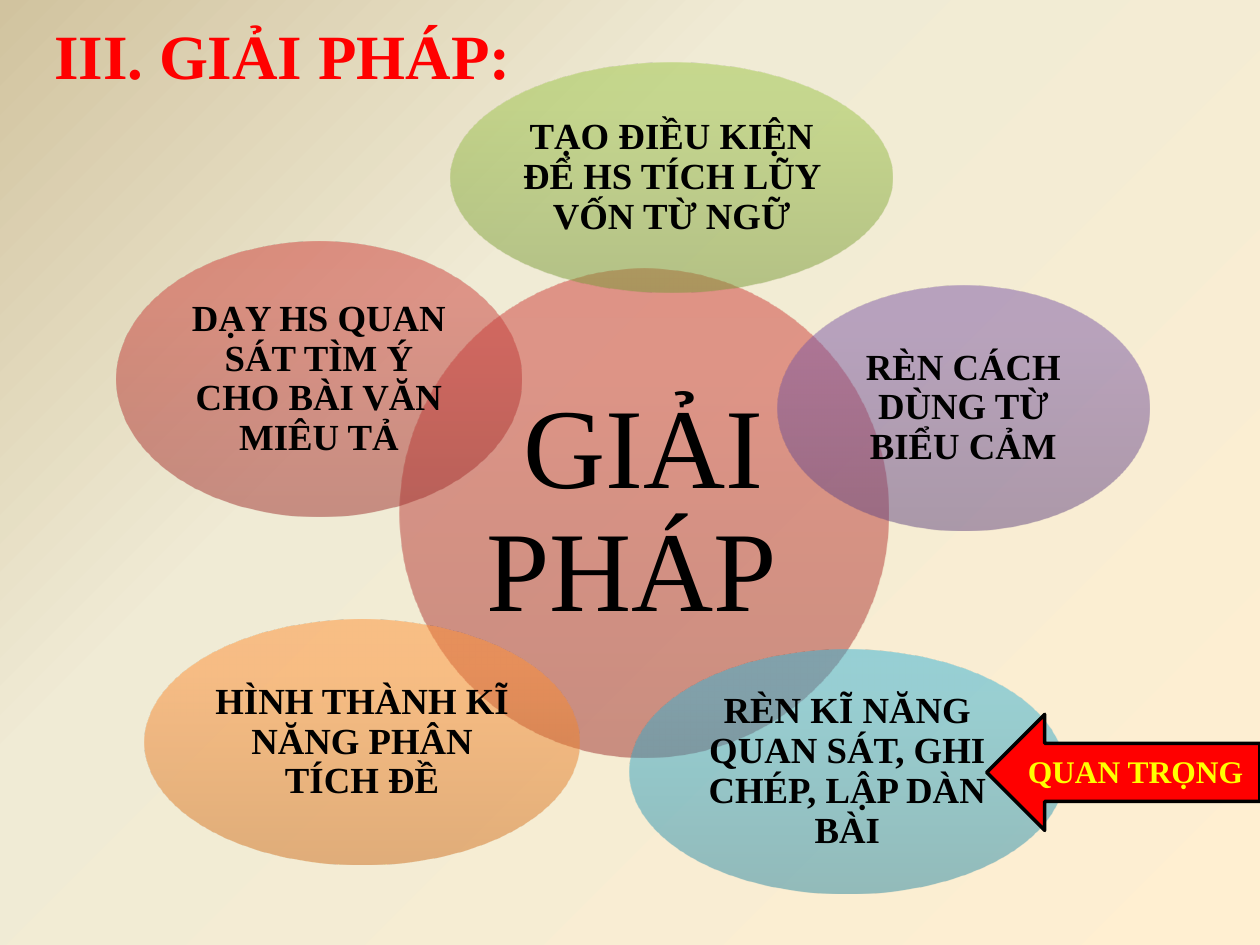
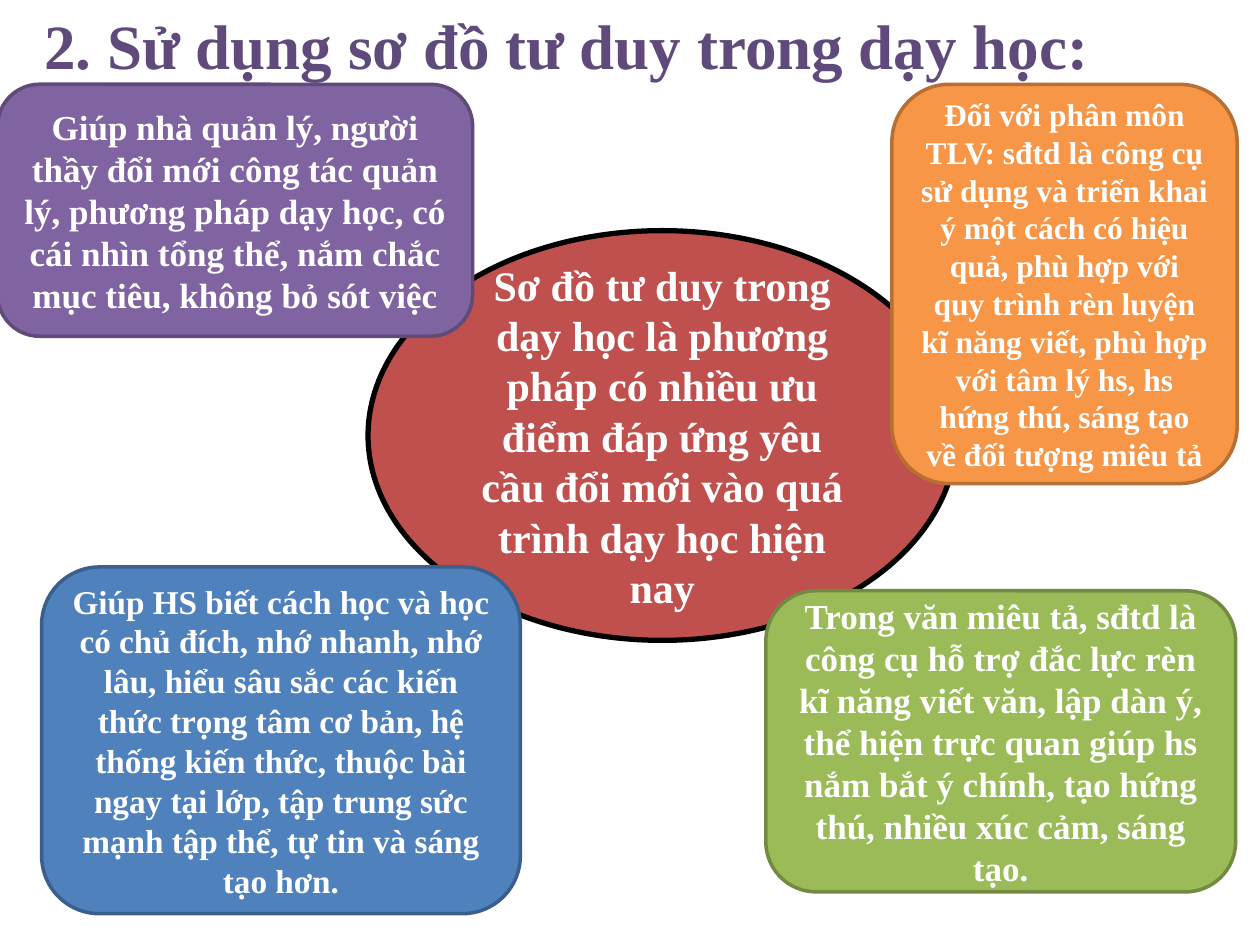
from lxml.etree import SubElement
from pptx import Presentation
from pptx.dml.color import RGBColor
from pptx.enum.shapes import MSO_SHAPE
from pptx.enum.text import MSO_ANCHOR, PP_ALIGN
from pptx.oxml.ns import qn
from pptx.util import Cm, Pt

FONT = "Times New Roman"
BLACK = RGBColor(0x00, 0x00, 0x00)
WHITE = RGBColor(0xFF, 0xFF, 0xFF)
RED = RGBColor(0xFF, 0x00, 0x00)
YELLOW = RGBColor(0xFF, 0xFF, 0x00)
DARK_PURPLE = RGBColor(0x60, 0x4A, 0x7B)
BRICK = RGBColor(0xC0, 0x50, 0x4D)
PURPLE, PURPLE_EDGE = RGBColor(0x80, 0x64, 0xA2), RGBColor(0x5F, 0x4A, 0x78)
BLUE, BLUE_EDGE = RGBColor(0x4F, 0x81, 0xBD), RGBColor(0x3A, 0x5F, 0x8C)
ORANGE, ORANGE_EDGE = RGBColor(0xF7, 0x96, 0x46), RGBColor(0xB7, 0x6F, 0x34)
GREEN, GREEN_EDGE = RGBColor(0x9B, 0xBB, 0x59), RGBColor(0x73, 0x8A, 0x42)

SAND_FADE = (RGBColor(0xFF, 0xEF, 0xD1), RGBColor(0xF0, 0xEB, 0xD5), RGBColor(0xD1, 0xC3, 0x9F))
RED_FADE = (RGBColor(0x9C, 0x2F, 0x2D), RGBColor(0xCB, 0x3E, 0x3A), RGBColor(0xCE, 0x3B, 0x37))
GREEN_FADE = (RGBColor(0x77, 0x97, 0x37), RGBColor(0x9B, 0xC3, 0x48), RGBColor(0x9D, 0xC7, 0x46))
PURPLE_FADE = (RGBColor(0x5F, 0x44, 0x80), RGBColor(0x7B, 0x58, 0xA6), RGBColor(0x7C, 0x57, 0xA8))
TEAL_FADE = (RGBColor(0x2A, 0x88, 0xA2), RGBColor(0x37, 0xB1, 0xD2), RGBColor(0x34, 0xB4, 0xD6))
ORANGE_FADE = (RGBColor(0xCC, 0x6E, 0x20), RGBColor(0xFF, 0x90, 0x34), RGBColor(0xFF, 0x91, 0x36))


def set_all(target, values):
    for name, value in values.items():
        setattr(target, name, value)


class Deck:
    def __init__(self):
        self.presentation = Presentation()
        set_all(self.presentation, {"slide_width": Cm(25.4), "slide_height": Cm(19.05)})
        self.slide = None

    def new_slide(self):
        self.slide = self.presentation.slides.add_slide(self.presentation.slide_layouts[6])

    def fade(self, fill, element, colors, middle, angle, opacity=100):
        fill.gradient()
        fill.gradient_angle = angle
        stops = element.find(".//" + qn("a:gsLst"))
        for stop in list(stops):
            stops.remove(stop)
        for position, color in zip((0, middle, 100), colors):
            stop = SubElement(stops, qn("a:gs"), pos=str(position * 1000))
            tint = SubElement(stop, qn("a:srgbClr"), val=str(color))
            if opacity < 100:
                SubElement(tint, qn("a:alpha"), val=str(opacity * 1000))

    def background(self, colors):
        self.fade(self.slide.background.fill, self.slide.element, colors, 65, 135)

    def fill_text(self, frame, text, size, color, bold=True, align=PP_ALIGN.LEFT, spacing=1.0, **layout):
        set_all(frame, {"word_wrap": True, **layout})
        paragraph = frame.paragraphs[0]
        set_all(paragraph, {"alignment": align, "line_spacing": spacing})
        run = paragraph.add_run()
        run.text = text
        set_all(run.font, {"name": FONT, "size": Pt(size), "bold": bold})
        run.font.color.rgb = color

    def text(self, box, text, size, color, **style):
        label = self.slide.shapes.add_textbox(*map(Cm, box))
        self.fill_text(label.text_frame, text, size, color, **style)

    def title(self, left, top, text, color):
        self.text((left, top, 26.24, 2), text, 36, color)

    def shape(self, kind, box):
        shape = self.slide.shapes.add_shape(kind, *map(Cm, box))
        shape.shadow.inherit = False
        return shape

    def solid(self, kind, box, fill, edge, width=2):
        shape = self.shape(kind, box)
        shape.fill.solid()
        shape.fill.fore_color.rgb = fill
        shape.line.color.rgb = edge
        shape.line.width = Pt(width)
        return shape

    def panel(self, kind, box, fill, edge, text, size, width=2):
        panel = self.solid(kind, box, fill, edge, width)
        self.fill_text(panel.text_frame, text, size, WHITE, align=PP_ALIGN.CENTER,
                       vertical_anchor=MSO_ANCHOR.MIDDLE)

    def bubble(self, box, colors, text, size=21, bold=True, inset=0.08):
        bubble = self.shape(MSO_SHAPE.OVAL, box)
        self.fade(bubble.fill, bubble.element, colors, 80, 90, opacity=50)
        bubble.line.fill.background()
        margins = {f"margin_{side}": Cm(inset) for side in ("left", "top", "right", "bottom")}
        self.fill_text(bubble.text_frame, text, size, BLACK, bold, PP_ALIGN.CENTER, 0.9,
                       vertical_anchor=MSO_ANCHOR.MIDDLE, **margins)

    def arrow(self, box, text):
        left, top, width, height = box
        self.solid(MSO_SHAPE.RIGHT_ARROW, box, RED, BLACK).rotation = 180
        self.text((left, top + 0.64, width + 0.84, 1.02), text, 18, YELLOW, margin_left=Cm(0.83))


def build_solutions(deck):
    deck.new_slide()
    deck.background(SAND_FADE)
    deck.title(0.84, 0.2, "III. GIẢI PHÁP:", RED)
    deck.bubble((8.05, 5.41, 9.86, 9.86), RED_FADE, "GIẢI PHÁP ", 65, False, 0.23)
    solutions = [
        ((9.09, 1.27, 8.9, 4.62), GREEN_FADE, "TẠO ĐIỀU KIỆN ĐỂ HS TÍCH LŨY VỐN TỪ NGỮ"),
        ((15.67, 5.76, 7.5, 4.93), PURPLE_FADE, "RÈN CÁCH DÙNG TỪ BIỂU CẢM"),
        ((12.7, 13.09, 8.76, 4.93), TEAL_FADE, "RÈN KĨ NĂNG QUAN SÁT, GHI CHÉP, LẬP DÀN BÀI"),
        ((2.92, 12.5, 8.76, 4.93), ORANGE_FADE, "HÌNH THÀNH KĨ NĂNG PHÂN TÍCH ĐỀ"),
        ((2.34, 4.87, 8.18, 5.54), RED_FADE, "DẠY HS QUAN SÁT TÌM Ý CHO BÀI VĂN MIÊU TẢ"),
    ]
    for solution in solutions:
        deck.bubble(*solution)
    deck.arrow((19.89, 14.4, 5.51, 2.34), "QUAN TRỌNG")


def build_mind_map(deck):
    deck.new_slide()
    deck.title(0.64, 0, "2. Sử dụng sơ đồ tư duy trong dạy học:", DARK_PURPLE)
    deck.panel(MSO_SHAPE.OVAL, (7.42, 4.65, 11.86, 8.26), BRICK, BLACK,
               "Sơ đồ tư duy trong dạy học là phương pháp có nhiều ưu điểm đáp ứng "
               "yêu cầu đổi mới vào quá trình dạy học hiện nay", 24, 3)
    benefits = [
        ((-0.05, 1.7, 9.58, 5.08), PURPLE, PURPLE_EDGE,
         "Giúp nhà quản lý, người thầy đổi mới công tác quản lý, phương pháp dạy học, "
         "có cái nhìn tổng thể, nắm chắc mục tiêu, không bỏ sót việc", 20),
        ((0.84, 11.43, 9.65, 6.99), BLUE, BLUE_EDGE,
         "Giúp HS biết cách học và học có chủ đích, nhớ nhanh, nhớ lâu, hiểu sâu sắc "
         "các kiến thức trọng tâm cơ bản, hệ thống kiến thức, thuộc bài ngay tại lớp, "
         "tập trung sức mạnh tập thể, tự tin và sáng tạo hơn.", 19),
        ((17.98, 1.7, 6.96, 8.05), ORANGE, ORANGE_EDGE,
         "Đối với phân môn TLV: sđtd là công cụ sử dụng và triển khai ý một cách có "
         "hiệu quả, phù hợp với quy trình rèn luyện kĩ năng viết, phù hợp với tâm lý hs, "
         "hs hứng thú, sáng tạo về đối tượng miêu tả", 18),
        ((15.44, 11.91, 9.47, 6.07), GREEN, GREEN_EDGE,
         "Trong văn miêu tả, sđtd là công cụ hỗ trợ đắc lực rèn kĩ năng viết văn, "
         "lập dàn ý, thể hiện trực quan giúp hs nắm bắt ý chính, tạo hứng thú, "
         "nhiều xúc cảm, sáng tạo.", 20),
    ]
    for benefit in benefits:
        deck.panel(MSO_SHAPE.ROUNDED_RECTANGLE, *benefit)


def main():
    deck = Deck()
    build_solutions(deck)
    build_mind_map(deck)
    deck.presentation.save("out.pptx")


if __name__ == "__main__":
    main()
